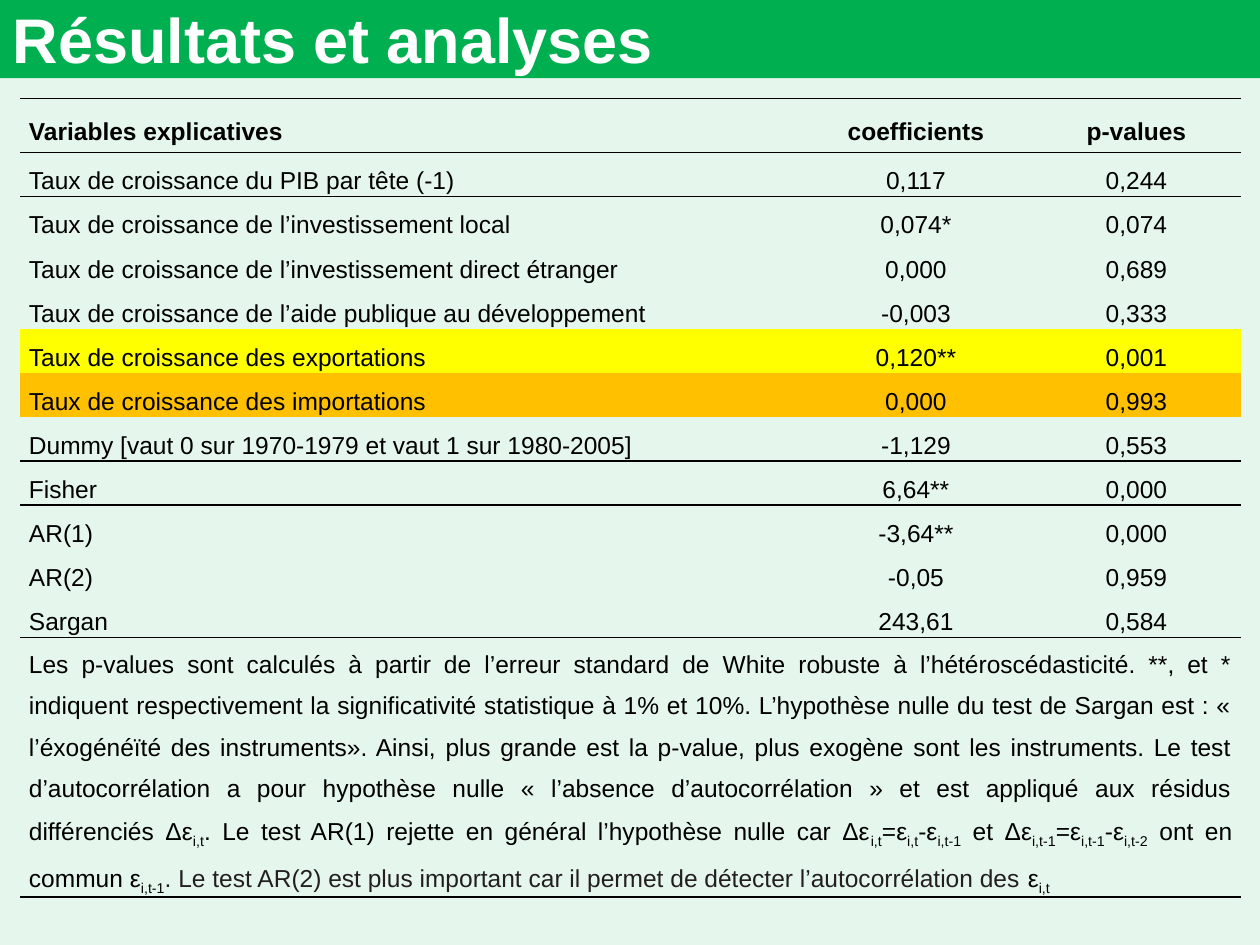
"""Build the slide of regression results and their analysis."""
from typing import NamedTuple

from lxml.etree import SubElement
from pptx import Presentation
from pptx.dml.color import RGBColor
from pptx.enum.text import MSO_ANCHOR, PP_ALIGN
from pptx.oxml.ns import qn
from pptx.util import Inches, Pt

GREEN, PALE_GREEN, BLACK, GREY, WHITE = "00B050", "E5F7ED", "000000", "231F20", "FFFFFF"
PLAIN_TABLE_STYLE = "{2D5ABB26-0587-4C30-8999-92F81FD0307C}"
COLUMN_WIDTHS = (6.19, 1.84, 1.66)
HEADER_HEIGHT, ROW_HEIGHT, NOTE_HEIGHT = 0.43, 0.35, 1.34
RULED_ROWS = (-1, 0, 7, 11, 12)


class Result(NamedTuple):
    variable: str
    coefficient: str
    p_value: str
    fill: str | None = None


class Span(NamedTuple):
    text: str
    subscript: str = ""
    color: str = BLACK


RESULTS = [
    Result("Variables explicatives", "coefficients", "p-values"),
    Result("Taux de croissance du PIB par tête (-1)", "0,117", "0,244"),
    Result("Taux de croissance de l’investissement local", "0,074*", "0,074"),
    Result("Taux de croissance de l’investissement direct étranger", "0,000", "0,689"),
    Result("Taux de croissance de l’aide publique au développement", "-0,003", "0,333"),
    Result("Taux de croissance des exportations", "0,120**", "0,001", "FFFF00"),
    Result("Taux de croissance des importations", "0,000", "0,993", "FFC000"),
    Result("Dummy [vaut 0 sur 1970-1979 et vaut 1 sur 1980-2005]", "-1,129", "0,553"),
    Result("Fisher", "6,64**", "0,000"),
    Result("AR(1)", "-3,64**", "0,000"),
    Result("AR(2)", "-0,05", "0,959"),
    Result("Sargan", "243,61", "0,584"),
]
NOTE = [
    Span(
        "Les p-values sont calculés à partir de l’erreur standard de White robuste à "
        "l’hétéroscédasticité. **, et * indiquent respectivement la significativité "
        "statistique à 1% et 10%. L’hypothèse nulle du test de Sargan est : « l’éxogénéïté "
        "des instruments». Ainsi, plus grande est la p-value, plus exogène sont les "
        "instruments. Le test d’autocorrélation a pour hypothèse nulle « l’absence "
        "d’autocorrélation » et est appliqué aux résidus différenciés Δε",
        "i,t",
    ),
    Span(". Le test AR(1) rejette en général l’hypothèse nulle car Δε", "i,t"),
    Span("=ε", "i,t"),
    Span("-ε", "i,t-1"),
    Span(" et Δε", "i,t-1"),
    Span("=ε", "i,t-1"),
    Span("-ε", "i,t-2"),
    Span(" ont en commun ε", "i,t-1"),
    Span(
        ". Le test AR(2) est plus important car il permet de détecter "
        "l’autocorrélation des ",
        color=GREY,
    ),
    Span("ε", "i,t"),
]


def set_color(target, color: str) -> None:
    """Give a fill a solid colour, or a font its colour."""
    if hasattr(target, "solid"):
        target.solid()
        target.fore_color.rgb = RGBColor.from_string(color)
    else:
        target.color.rgb = RGBColor.from_string(color)


def format_font(font, size: float, color: str = BLACK, bold: bool = False) -> None:
    """Set the typeface, size, weight and colour of a font."""
    font.name, font.size, font.bold = "Arial", Pt(size), bold
    set_color(font, color)


def add_title(slide) -> None:
    """Place the title band across the top of the slide."""
    title = slide.shapes.title
    title.left, title.top, title.width, title.height = map(Inches, (0, -0.01, 10, 0.63))
    set_color(title.fill, GREEN)
    title.text_frame.text = "Résultats et analyses"
    title.text_frame.vertical_anchor = MSO_ANCHOR.MIDDLE
    para = title.text_frame.paragraphs[0]
    para.alignment = PP_ALIGN.LEFT
    format_font(para.runs[0].font, 36, WHITE, True)


def add_rule(cell, tag: str) -> None:
    """Draw a black one-point border on one side of a cell."""
    properties = cell._tc.get_or_add_tcPr()
    line = SubElement(properties, qn(tag), w=str(Pt(1)))
    fill = SubElement(line, qn("a:solidFill"))
    SubElement(fill, qn("a:srgbClr"), val=BLACK)


def format_cell(cell, row: int, alignment: PP_ALIGN, fill: str | None = None) -> None:
    """Set the margins, rules, fill and paragraph layout of a cell."""
    cell.margin_left = cell.margin_right = Inches(0.07)
    cell.margin_top = cell.margin_bottom = 0
    cell.vertical_anchor = MSO_ANCHOR.MIDDLE
    if row - 1 in RULED_ROWS:
        add_rule(cell, "a:lnT")
    if row in RULED_ROWS:
        add_rule(cell, "a:lnB")
    if fill:
        set_color(cell.fill, fill)
    else:
        cell.fill.background()
    para = cell.text_frame.paragraphs[0]
    para.alignment, para.line_spacing = alignment, 1.5


def add_note(table, row: int) -> None:
    """Write the explanatory note across the last row."""
    for column in range(len(COLUMN_WIDTHS)):
        format_cell(table.cell(row, column), row, PP_ALIGN.JUSTIFY)
    note = table.cell(row, 0)
    note.merge(table.cell(row, len(COLUMN_WIDTHS) - 1))
    para = note.text_frame.paragraphs[0]
    for span in NOTE:
        run = para.add_run()
        run.text = span.text
        format_font(run.font, 14, span.color)
        if span.subscript:
            index = para.add_run()
            index.text = span.subscript
            format_font(index.font, 14)
            index.font._element.set("baseline", "-25000")


def add_results(slide) -> None:
    """Add the table of estimates with its note."""
    heights = [HEADER_HEIGHT] + [ROW_HEIGHT] * (len(RESULTS) - 1) + [NOTE_HEIGHT]
    place = map(Inches, (0.16, 0.78, 9.69, 6.43))
    frame = slide.shapes.add_table(len(heights), len(COLUMN_WIDTHS), *place)
    table = frame.table
    table.first_row = table.horz_banding = False
    table._tbl.tblPr.find(qn("a:tableStyleId")).text = PLAIN_TABLE_STYLE
    for column, width in zip(table.columns, COLUMN_WIDTHS):
        column.width = Inches(width)
    for row, height in zip(table.rows, heights):
        row.height = Inches(height)
    for row, result in enumerate(RESULTS):
        for column, text in enumerate(result[:3]):
            cell = table.cell(row, column)
            cell.text_frame.text = text
            alignment = PP_ALIGN.CENTER if column else PP_ALIGN.LEFT
            format_cell(cell, row, alignment, result.fill)
            format_font(cell.text_frame.paragraphs[0].runs[0].font, 14, bold=row == 0)
    add_note(table, len(RESULTS))
    frame.height = Inches(6.43)


def main() -> None:
    """Build and save the deck."""
    deck = Presentation()
    deck.slide_width, deck.slide_height = Inches(10), Inches(7.5)
    slide = deck.slides.add_slide(deck.slide_layouts[0])
    set_color(slide.background.fill, PALE_GREEN)
    subtitle = slide.placeholders[1].element
    subtitle.getparent().remove(subtitle)
    add_title(slide)
    add_results(slide)
    deck.save("out.pptx")


if __name__ == "__main__":
    main()
